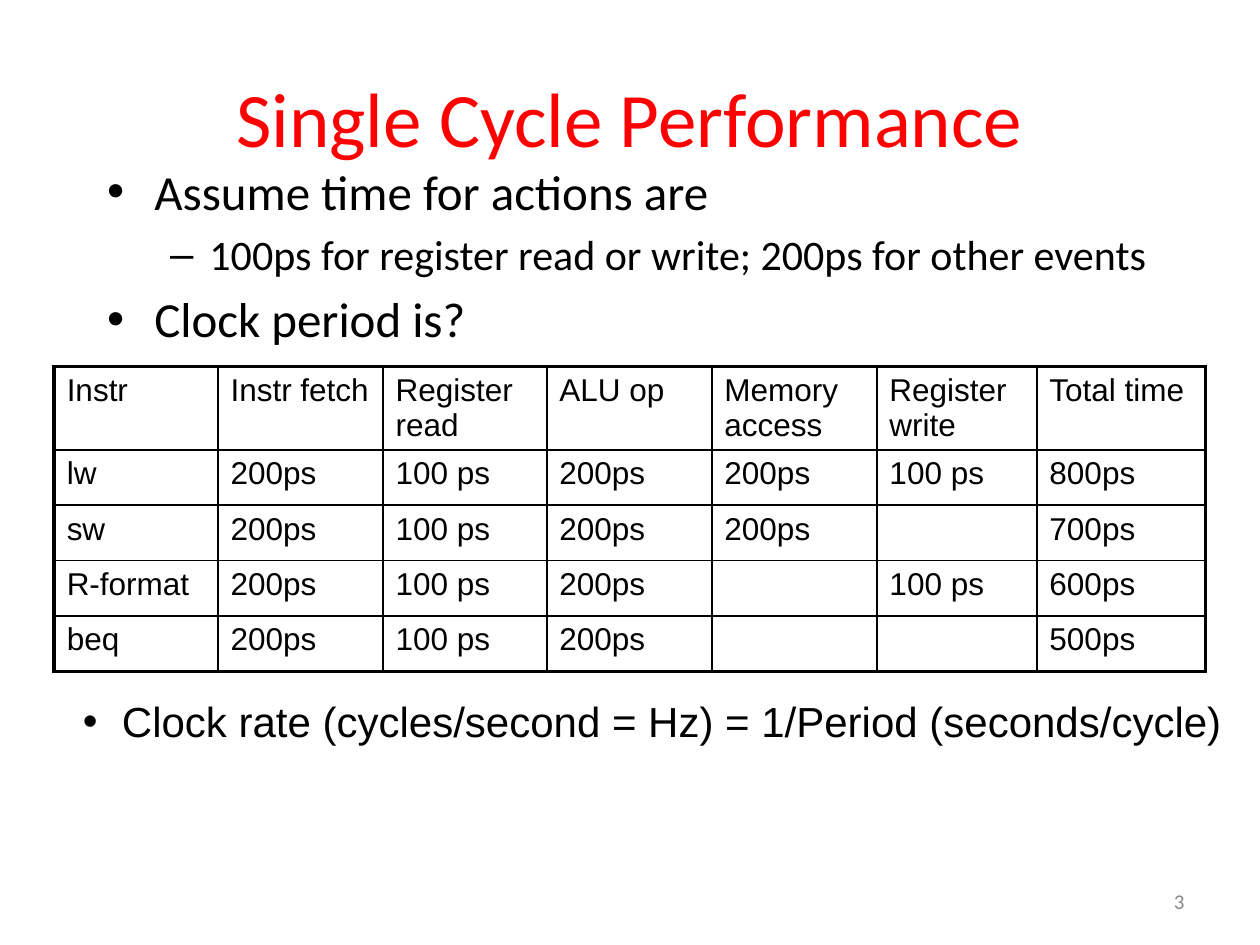
"""Build the slide on single cycle performance."""
from lxml import etree
from pptx import Presentation
from pptx.dml.color import RGBColor
from pptx.enum.text import MSO_ANCHOR, MSO_AUTO_SIZE, PP_ALIGN
from pptx.oxml.ns import qn
from pptx.util import Inches, Pt

TOP, MID = MSO_ANCHOR.TOP, MSO_ANCHOR.MIDDLE
LEFT, CENTER, RIGHT = PP_ALIGN.LEFT, PP_ALIGN.CENTER, PP_ALIGN.RIGHT
FIXED = MSO_AUTO_SIZE.NONE

HUES = {"title": "FF0000", "ink": "000000", "page": "898989"}
TITLE = "Single Cycle Performance"
POINTS = [
    (0, "Assume time for actions are"),
    (1, "100ps for register read or write; 200ps for other events"),
    (0, "Clock period is?"),
]
TIMES = [
    ["Instr", "Instr fetch", "Register read", "ALU op", "Memory access",
     "Register write", "Total time"],
    ["lw", "200ps", "100 ps", "200ps", "200ps", "100 ps", "800ps"],
    ["sw", "200ps", "100 ps", "200ps", "200ps", "", "700ps"],
    ["R-format", "200ps", "100 ps", "200ps", "", "100 ps", "600ps"],
    ["beq", "200ps", "100 ps", "200ps", "", "", "500ps"],
]
RATE = "Clock rate (cycles/second = Hz) = 1/Period (seconds/cycle)"
PAGE = "3"
WIDTHS = [1.3, 1.31, 1.3, 1.31, 1.31, 1.27, 1.34]
HEIGHTS = [0.66] + [0.44] * 4
SIZES = [28, 24]
OUTER, HEAD, INNER = 2.25, 1.5, 1

BOXES = {
    "title": (0.5, 0.3, 9, 1.25),
    "body": (0.75, 1.23, 9.05, 1.95),
    "table": (0.43, 2.91, sum(WIDTHS), sum(HEIGHTS)),
    "rate": (0.56, 5.47, 9.44, 1.95),
    "page": (7.17, 6.95, 2.33, 0.4),
}


def place(name):
    return [Inches(n) for n in BOXES[name]]


def style(para, size, face="Calibri", hue="ink", align=LEFT):
    para.alignment = align
    for key, value in {"size": Pt(size), "name": face}.items():
        setattr(para.font, key, value)
    para.font.color.rgb = RGBColor.from_string(HUES[hue])


def settle(shape, name, anchor=TOP):
    for key, value in zip(("left", "top", "width", "height"), place(name)):
        setattr(shape, key, value)
    frame = shape.text_frame
    form = {"word_wrap": True, "auto_size": FIXED, "vertical_anchor": anchor}
    for key, value in form.items():
        setattr(frame, key, value)
    return frame


def border(cell, sides):
    props = cell._tc.get_or_add_tcPr()
    for side, width in sides.items():
        line = etree.SubElement(props, qn("a:ln" + side), w=str(Pt(width)))
        fill = etree.SubElement(line, qn("a:solidFill"))
        etree.SubElement(fill, qn("a:srgbClr"), val=HUES["ink"])


def add_times(slide):
    rows, cols = len(TIMES), len(WIDTHS)
    table = slide.shapes.add_table(rows, cols, *place("table")).table
    table.first_row = table.horz_banding = False
    for col, width in zip(table.columns, WIDTHS):
        col.width = Inches(width)
    levels = [OUTER, HEAD] + [INNER] * (rows - 2) + [OUTER]
    edges = [OUTER] + [INNER] * (cols - 1) + [OUTER]
    for r, words in enumerate(TIMES):
        table.rows[r].height = Inches(HEIGHTS[r])
        for c, word in enumerate(words):
            cell = table.cell(r, c)
            cell.text = word
            style(cell.text_frame.paragraphs[0], 18, "Arial")
            border(cell, {"L": edges[c], "R": edges[c + 1],
                          "T": levels[r], "B": levels[r + 1]})
            cell.fill.background()


def main():
    deck = Presentation()
    deck.slide_width, deck.slide_height = Inches(10), Inches(7.5)
    slide = deck.slides.add_slide(deck.slide_layouts[1])
    title, body = slide.placeholders

    frame = settle(title, "title", MID)
    frame.text = TITLE
    style(frame.paragraphs[0], 44, hue="title", align=CENTER)

    frame = settle(body, "body")
    frame.text = "\n".join(text for _, text in POINTS)
    for para, (level, _) in zip(frame.paragraphs, POINTS):
        para.level = level
        style(para, SIZES[level])

    add_times(slide)

    frame = settle(slide.shapes.add_textbox(*place("rate")), "rate")
    frame.text = RATE
    para = frame.paragraphs[0]
    style(para, 24, "Arial")
    props = para._p.get_or_add_pPr()
    props.set("marL", str(Inches(0.31)))
    props.set("indent", str(Inches(-0.31)))
    etree.SubElement(props, qn("a:buFont"), typeface="Arial")
    etree.SubElement(props, qn("a:buChar"), char="•")
    props.append(props.find(qn("a:defRPr")))

    frame = settle(slide.shapes.add_textbox(*place("page")), "page", MID)
    frame.text = PAGE
    style(frame.paragraphs[0], 12, hue="page", align=RIGHT)

    deck.save("out.pptx")


if __name__ == "__main__":
    main()
